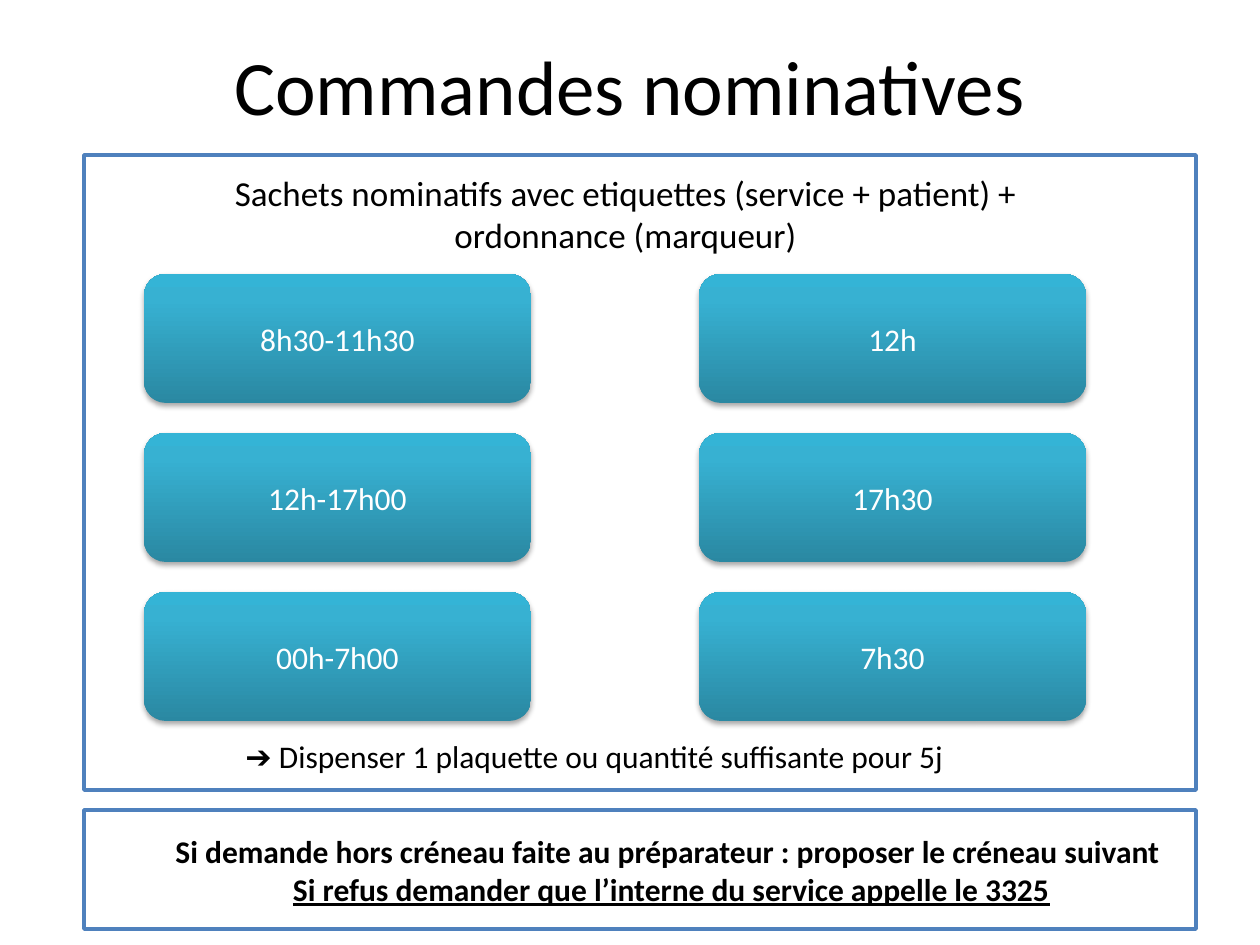
from copy import deepcopy
from pptx import Presentation
from pptx.dml.color import RGBColor
from pptx.enum.shapes import MSO_SHAPE
from pptx.enum.text import MSO_ANCHOR, PP_ALIGN
from pptx.oxml import parse_xml
from pptx.oxml.ns import nsdecls
from pptx.util import Emu, Pt

BLACK = RGBColor(0x00, 0x00, 0x00)
WHITE = RGBColor(0xFF, 0xFF, 0xFF)
BLUE = RGBColor(0x4F, 0x81, 0xBD)
GRADIENT = [
    (0, RGBColor(0x2A, 0x88, 0xA2)),
    (0.8, RGBColor(0x37, 0xB1, 0xD2)),
    (1, RGBColor(0x34, 0xB4, 0xD6)),
]
SHADOW = (
    f'<a:outerShdw {nsdecls("a")} blurRad="40000" dist="23000" dir="5400000" rotWithShape="0">'
    '<a:srgbClr val="000000"><a:alpha val="35000"/></a:srgbClr></a:outerShdw>'
)


def px(*values):
    return [Emu(v * 914400 // 126) for v in values]


def write(s, lines, size, color=BLACK, align=PP_ALIGN.CENTER, anchor=MSO_ANCHOR.MIDDLE):
    tf = s.text_frame
    tf.word_wrap = True
    tf.vertical_anchor = anchor
    tf.text = "\n".join(lines)
    for p in tf.paragraphs:
        p.alignment = align
        p.font.name = "Calibri"
        p.font.size = Pt(size)
        p.font.color.rgb = color
    return tf.paragraphs


prs = Presentation()
prs.slide_width, prs.slide_height = px(1260, 945)
slide = prs.slides.add_slide(prs.slide_layouts[6])
shapes = slide.shapes

notice = shapes.add_shape(MSO_SHAPE.RECTANGLE, *px(84, 810, 1112, 119))
notice.fill.solid()
notice.fill.fore_color.rgb = WHITE
paragraphs = write(notice, [
    "Si demande hors créneau faite au préparateur : proposer le créneau suivant ",
    "Si refus demander que l’interne du service appelle le 3325",
], 18)
for p in paragraphs:
    p.level = 1
    p.font.bold = True
    p._p.get_or_add_pPr().set("marL", str(px(63)[0]))
paragraphs[1].font.underline = True

title = shapes.add_textbox(*px(63, 6, 1134, 158))
write(title, ["Commandes nominatives"], 44)

slots = [("8h30-11h30", "12h"), ("12h-17h00", "17h30"), ("00h-7h00", "7h30")]
for row, times in enumerate(slots):
    for col, time in enumerate(times):
        s = shapes.add_shape(
            MSO_SHAPE.ROUNDED_RECTANGLE, *px(144 + 555 * col, 274 + 159 * row, 387, 129))
        s.fill.gradient()
        s.fill.gradient_angle = 90
        stops = s.fill._fill._gradFill.gsLst
        stops.append(deepcopy(stops[0]))
        for stop, (position, color) in zip(s.fill.gradient_stops, GRADIENT):
            stop.position = position
            stop.color.rgb = color
        s.line.fill.background()
        s.shadow.inherit = False
        s._element.spPr.effectLst.append(parse_xml(SHADOW))
        write(s, [time], 18, WHITE)

dispense = shapes.add_textbox(*px(233, 731, 853, 50))
write(dispense, ["➔ Dispenser 1 plaquette ou quantité suffisante pour 5j"], 18,
      align=PP_ALIGN.LEFT, anchor=MSO_ANCHOR.TOP)

frame = shapes.add_shape(MSO_SHAPE.RECTANGLE, *px(84, 155, 1112, 635))
frame.fill.background()
for s in (notice, frame):
    s.line.color.rgb = BLUE
    s.line.width = Pt(2)
    s.shadow.inherit = False

heading = shapes.add_textbox(*px(174, 165, 903, 97))
write(heading, ["Sachets nominatifs avec etiquettes (service + patient) + ordonnance (marqueur)"], 20,
      anchor=MSO_ANCHOR.TOP)

prs.save("out.pptx")
